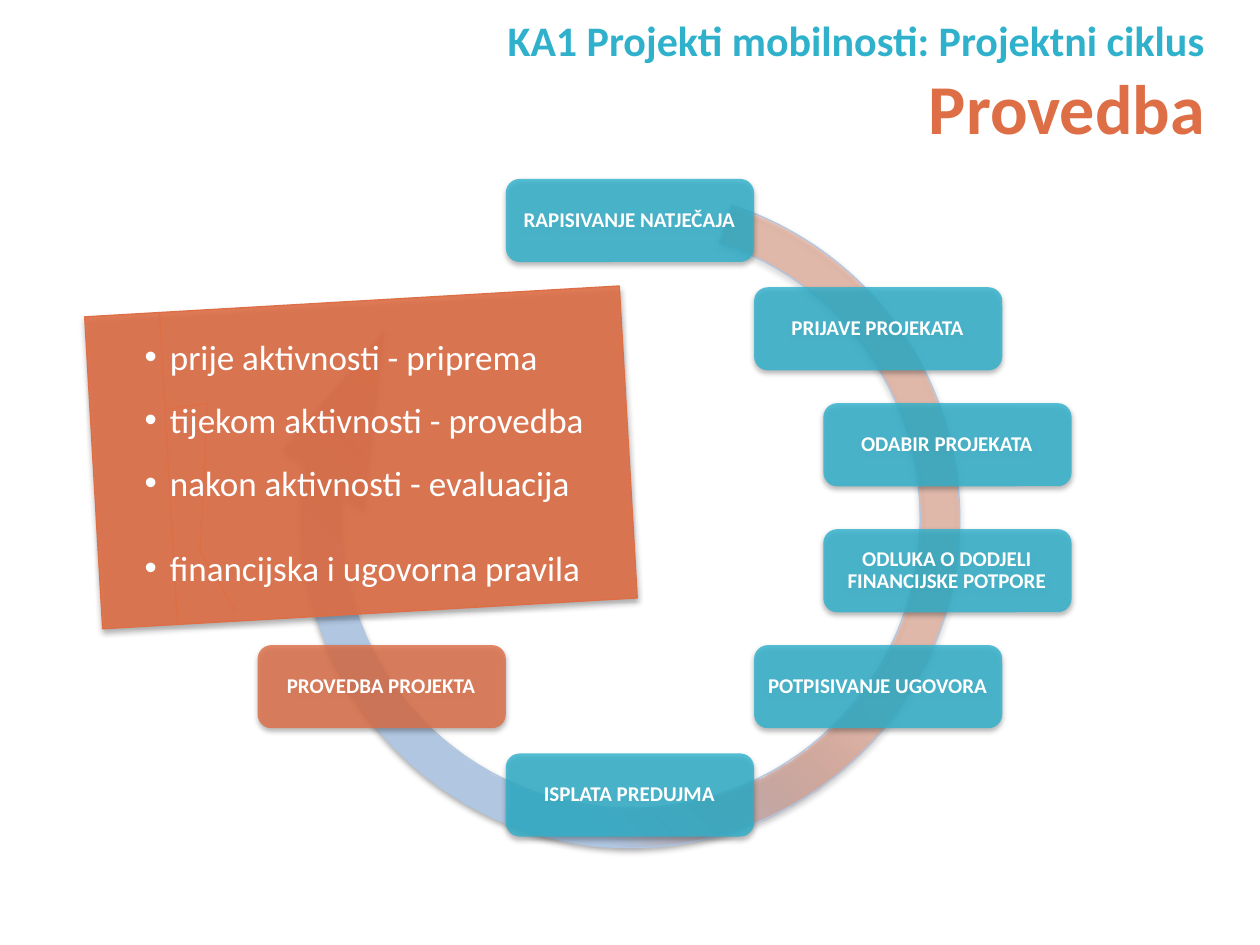
from pptx import Presentation
from pptx.dml.color import RGBColor
from pptx.enum.shapes import MSO_SHAPE
from pptx.enum.text import MSO_ANCHOR, PP_ALIGN
from pptx.oxml import parse_xml
from pptx.oxml.ns import nsdecls, qn
from pptx.util import Inches, Pt
from lxml import etree

ROUNDED = MSO_SHAPE.ROUNDED_RECTANGLE
RING = MSO_SHAPE.CIRCULAR_ARROW
CALLOUT = MSO_SHAPE.LINE_CALLOUT_3_BORDER_AND_ACCENT_BAR
MIDDLE, BOTTOM, TOP = MSO_ANCHOR.MIDDLE, MSO_ANCHOR.BOTTOM, MSO_ANCHOR.TOP
CENTER, RIGHT, LEFT = PP_ALIGN.CENTER, PP_ALIGN.RIGHT, PP_ALIGN.LEFT

COLUMNS, ROWS = 100, 75
TEAL, ORANGE, BLUE, PALE_BLUE, WHITE = "2FB1CC", "DE6E46", "B0C6E1", "CAD9EB", "FFFFFF"


def rgb(code):
    return RGBColor.from_string(code)


class CycleSlide:
    font = "Calibri"
    indent = Inches(0.2)

    def __init__(self, deck):
        self.cell_width = deck.slide_width / COLUMNS
        self.cell_height = deck.slide_height / ROWS
        self.slide = deck.slides.add_slide(deck.slide_layouts[6])

    def place(self, column, row, columns, rows):
        return (round(column * self.cell_width), round(row * self.cell_height),
                round(columns * self.cell_width), round(rows * self.cell_height))

    def shape(self, preset, area, color, opacity=100, outline=None, turn=0, adjust=()):
        shape = self.slide.shapes.add_shape(preset, *self.place(*area))
        shape.rotation = turn
        for index, value in enumerate(adjust):
            shape.adjustments[index] = value
        shape.fill.solid()
        shape.fill.fore_color.rgb = rgb(color)
        tint = shape._element.spPr.find(qn("a:solidFill"))[0]
        etree.SubElement(tint, qn("a:alpha"), val=str(opacity * 1000))
        if outline:
            shape.line.color.rgb = rgb(outline)
            shape.line.width = Pt(0.75)
        else:
            shape.line.fill.background()
        self.cast_shadow(shape)
        return shape

    def cast_shadow(self, shape):
        shape.shadow.inherit = False
        effects = shape._element.spPr.find(qn("a:effectLst"))
        effects.append(parse_xml(
            f'<a:outerShdw {nsdecls("a")} blurRad="39400" dist="22900" dir="5400000" '
            'rotWithShape="0"><a:srgbClr val="000000"><a:alpha val="35000"/>'
            '</a:srgbClr></a:outerShdw>'))

    def ring(self, area, stops, turn, adjust):
        ring = self.shape(RING, area, BLUE, outline=BLUE, turn=turn, adjust=adjust)
        marks = "".join(
            f'<a:gs pos="{position * 1000}"><a:srgbClr val="{color}">'
            f'<a:alpha val="{opacity * 1000}"/></a:srgbClr></a:gs>'
            for position, color, opacity in stops)
        properties = ring._element.spPr
        properties.replace(properties.find(qn("a:solidFill")), parse_xml(
            f'<a:gradFill {nsdecls("a")} rotWithShape="1"><a:gsLst>{marks}</a:gsLst>'
            '<a:path path="circle"><a:fillToRect l="100000" b="100000"/></a:path>'
            '</a:gradFill>'))

    def set_lines(self, frame, lines, align, anchor, bold=True, bulleted=False):
        frame.word_wrap = True
        frame.vertical_anchor = anchor
        for index, (words, size, color, gap) in enumerate(lines):
            paragraph = frame.paragraphs[0] if index == 0 else frame.add_paragraph()
            paragraph.text = words
            paragraph.alignment = align
            if bulleted:
                self.add_bullet(paragraph)
            if gap:
                paragraph.space_before = Pt(gap)
            paragraph.font.name = self.font
            paragraph.font.size = Pt(size)
            paragraph.font.bold = bold
            paragraph.font.color.rgb = rgb(color)

    def add_bullet(self, paragraph):
        properties = paragraph._p.get_or_add_pPr()
        properties.set("marL", str(self.indent))
        properties.set("indent", str(-self.indent))
        etree.SubElement(properties, qn("a:buFont"), typeface="Arial")
        etree.SubElement(properties, qn("a:buChar"), char="•")

    def step(self, center_column, center_row, label, color):
        width, height = 19.7, 6.6
        area = (center_column - width / 2, center_row - height / 2, width, height)
        frame = self.shape(ROUNDED, area, color, opacity=81).text_frame
        frame.margin_left = Inches(0.07)
        frame.margin_right = frame.margin_top = frame.margin_bottom = Inches(0.08)
        self.set_lines(frame, [(label, 12, WHITE, 0)], CENTER, MIDDLE)
        frame.paragraphs[0].line_spacing = 0.9

    def text(self, area, lines, align, anchor, **style):
        box = self.slide.shapes.add_textbox(*self.place(*area))
        self.set_lines(box.text_frame, lines, align, anchor, **style)


def main():
    deck = Presentation()
    deck.slide_width, deck.slide_height = Inches(10), Inches(7.5)
    page = CycleSlide(deck)

    page.text((24, 0.5, 72.6, 11.8), [
        ("KA1 Projekti mobilnosti: Projektni ciklus", 24, TEAL, 0),
        ("Provedba", 40, ORANGE, 0),
    ], RIGHT, BOTTOM)

    page.ring((21.5, 12.6, 57.1, 57.1),
              [(47, ORANGE, 34), (67, BLUE, 100), (83, BLUE, 100), (100, PALE_BLUE, 100)],
              307.9, (0.055, 18.03, 143.54, 203.97, 0.07))

    cycle_column, cycle_row = 50, 40.3
    steps = [
        (0, -22.8, "RAPISIVANJE NATJEČAJA", TEAL),
        (19.7, -14.2, "PRIJAVE PROJEKATA", TEAL),
        (25.2, -5, "ODABIR PROJEKATA", TEAL),
        (25.2, 5, "ODLUKA O DODJELI FINANCIJSKE POTPORE", TEAL),
        (19.7, 14.2, "POTPISIVANJE UGOVORA", TEAL),
        (0, 22.8, "ISPLATA PREDUJMA", TEAL),
        (-19.7, 14.2, "PROVEDBA PROJEKTA", ORANGE),
    ]
    for across, down, label, color in steps:
        page.step(cycle_column + across, cycle_row + down, label, color)

    page.shape(CALLOUT, (7.4, 23.9, 42.5, 24.8), ORANGE, opacity=90, outline=ORANGE,
               turn=356.7, adjust=(0.31, 0.14, 0.3, 0.22, 0.77, 0.19, 0.97, 0.25))
    page.text((10.5, 26.1, 39.5, 21.2), [
        ("prije aktivnosti - priprema", 20, WHITE, 0),
        ("tijekom aktivnosti - provedba", 20, WHITE, 12.2),
        ("nakon aktivnosti - evaluacija", 20, WHITE, 12.2),
        ("financijska i ugovorna pravila", 20, WHITE, 24.4),
    ], LEFT, TOP, bold=False, bulleted=True)

    deck.save("out.pptx")


if __name__ == "__main__":
    main()
